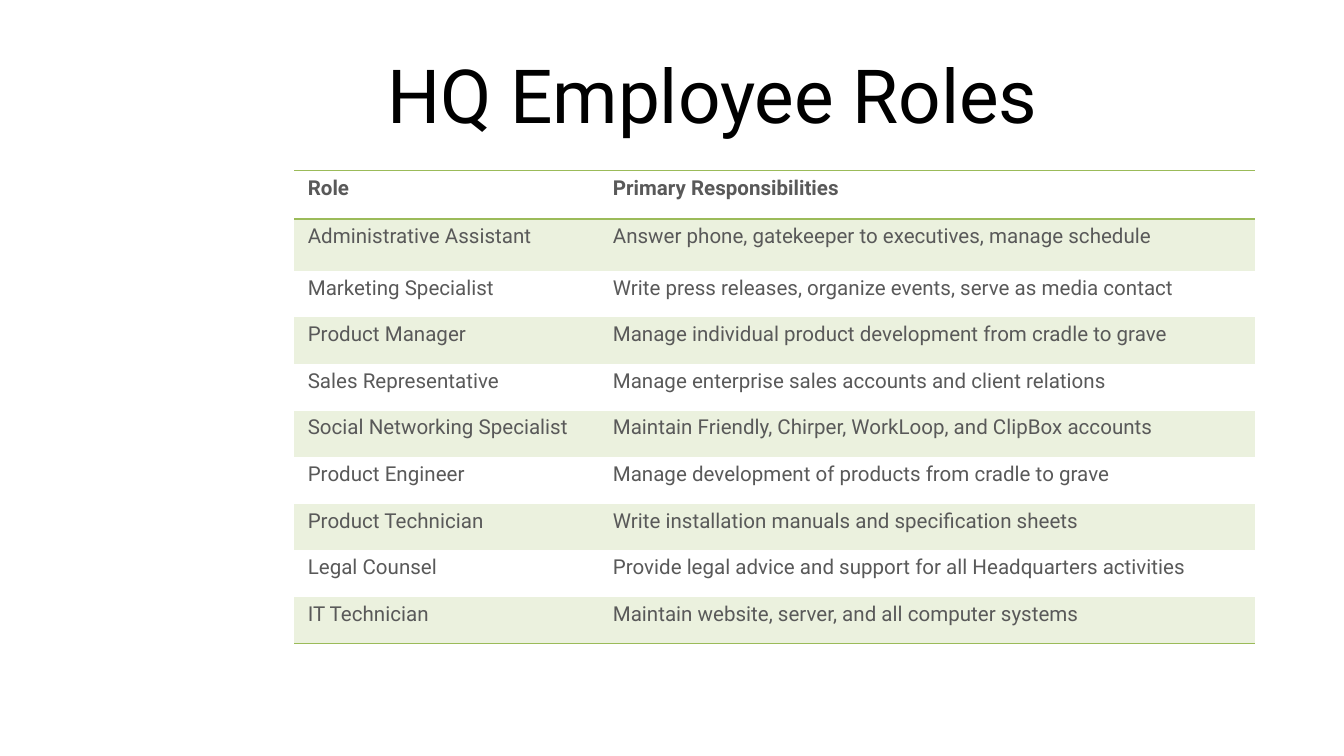
from lxml import etree
from pptx import Presentation
from pptx.dml.color import RGBColor
from pptx.enum import text
from pptx.oxml import ns
from pptx.util import Pt

PX = 4572  # EMU per px, 200 px to the inch
FONT = "Roboto"
COLORS = {"title": "000000", "body": "595959", "rule": "9BBB59", "band": "EBF1DE"}
NO_STYLE = "{2D5ABB26-0587-4C30-8999-92F81FD0307C}"

ROLES = [
    ("Role", "Primary Responsibilities"),
    ("Administrative Assistant", "Answer phone, gatekeeper to executives, manage schedule"),
    ("Marketing Specialist", "Write press releases, organize events, serve as media contact"),
    ("Product Manager", "Manage individual product development from cradle to grave"),
    ("Sales Representative", "Manage enterprise sales accounts and client relations"),
    ("Social Networking Specialist", "Maintain Friendly, Chirper, WorkLoop, and ClipBox accounts"),
    ("Product Engineer", "Manage development of products from cradle to grave"),
    ("Product Technician", "Write installation manuals and specification sheets"),
    ("Legal Counsel", "Provide legal advice and support for all Headquarters activities"),
    ("IT Technician", "Maintain website, server, and all computer systems"),
]


def px(length):
    return round(length * PX)


def format_font(font, size, color, bold=False):
    font.name = FONT
    font.size = Pt(size)
    font.bold = bold
    font.color.rgb = RGBColor.from_string(COLORS[color])


def add_border(cell, side):
    properties = cell._tc.get_or_add_tcPr()
    line = etree.SubElement(properties, ns.qn(f"a:ln{side}"), w=str(Pt(1)))
    fill = etree.SubElement(line, ns.qn("a:solidFill"))
    etree.SubElement(fill, ns.qn("a:srgbClr"), val=COLORS["rule"])


def place_title(slide, left, top, width, height):
    title = slide.shapes.title
    title.left, title.top, title.width, title.height = map(px, (left, top, width, height))
    frame = title.text_frame
    frame.text = "HQ Employee Roles"
    frame.word_wrap = True
    frame.vertical_anchor = text.MSO_ANCHOR.MIDDLE
    frame.margin_left = px(192)  # shifts the centred words right
    frame.margin_right = px(20)
    paragraph = frame.paragraphs[0]
    paragraph.alignment = text.PP_ALIGN.CENTER
    format_font(paragraph.runs[0].font, 40, "title")


def format_cell(cell, words, row, last_row):
    cell.margin_left = cell.margin_right = px(20)
    cell.margin_top = cell.margin_bottom = px(8)
    cell.text = words
    format_font(cell.text_frame.paragraphs[0].runs[0].font, 11, "body", bold=row == 0)

    # Rules around the header and under the last row
    if row == 0:
        add_border(cell, "T")
    if row in (0, last_row):
        add_border(cell, "B")

    # Bands on odd rows
    if row % 2:
        cell.fill.solid()
        cell.fill.fore_color.rgb = RGBColor.from_string(COLORS["band"])
    else:
        cell.fill.background()


def place_roles_table(slide, left, top, width, height):
    frame = slide.shapes.add_table(len(ROLES), 2, *map(px, (left, top, width, height)))
    table = frame.table
    table.first_row = table.horz_banding = False
    table._tbl.tblPr.find(ns.qn("a:tableStyleId")).text = NO_STYLE

    # Column widths, and row heights that share what the first two leave
    role_width = 454
    for column, column_width in zip(table.columns, (role_width, width - role_width)):
        column.width = px(column_width)
    top_heights = [72, 77]
    other_rows = len(ROLES) - len(top_heights)
    heights = top_heights + [(height - sum(top_heights)) / other_rows] * other_rows
    for row, row_height in zip(table.rows, heights):
        row.height = px(row_height)

    for row, entry in enumerate(ROLES):
        for column, words in enumerate(entry):
            format_cell(table.cell(row, column), words, row, len(ROLES) - 1)


def main():
    presentation = Presentation()
    presentation.slide_width, presentation.slide_height = px(2000), px(1125)
    slide = presentation.slides.add_slide(presentation.slide_layouts[5])
    place_title(slide, 48, 46, 1852, 188)
    place_roles_table(slide, 438, 254, 1430, 704)
    presentation.save("out.pptx")


if __name__ == "__main__":
    main()
